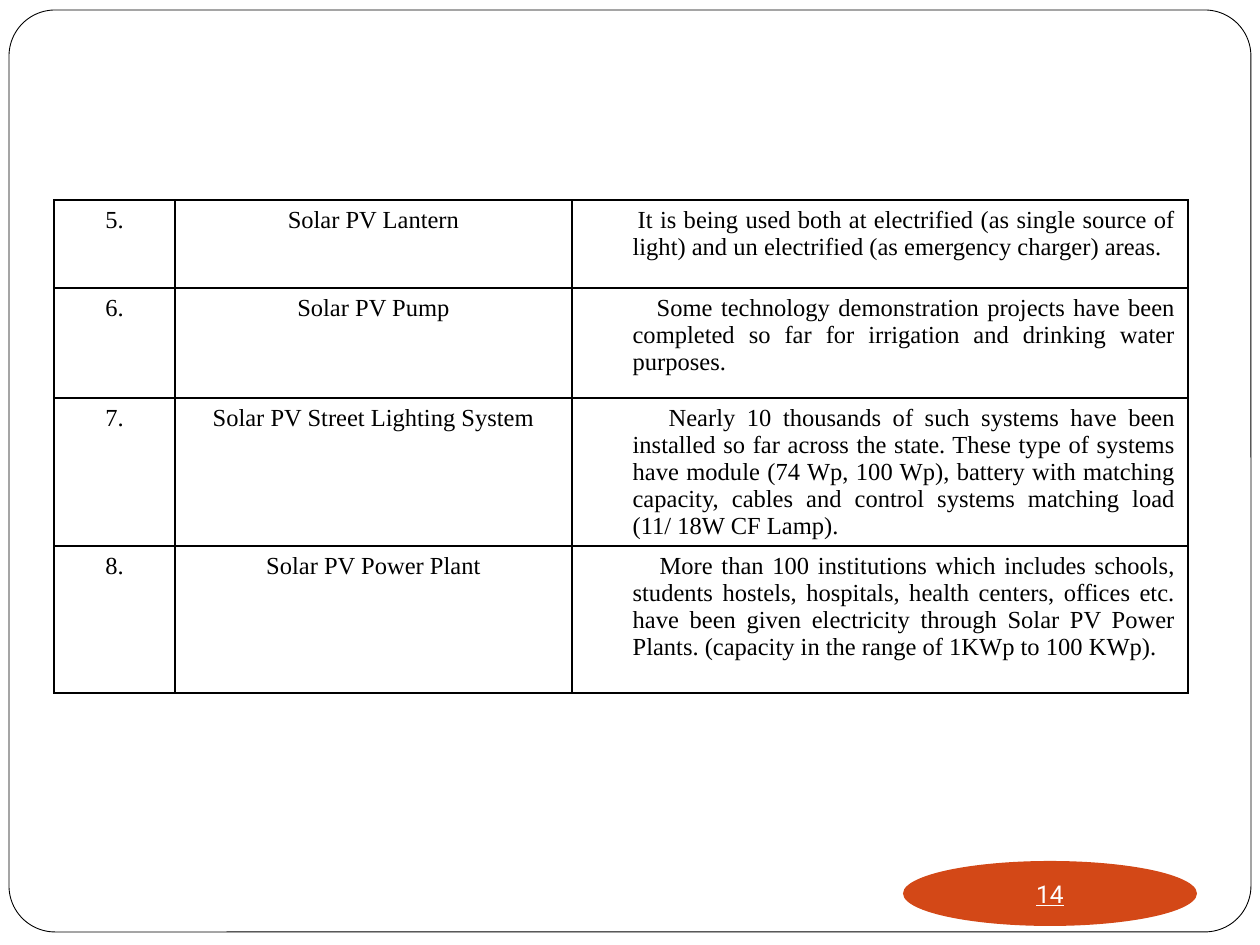
from dataclasses import dataclass

from lxml.etree import SubElement
from pptx import Presentation
from pptx.dml.color import RGBColor
from pptx.enum.shapes import MSO_SHAPE as Preset
from pptx.enum.text import MSO_ANCHOR as Anchor, PP_ALIGN as Align
from pptx.oxml.ns import qn
from pptx.util import Emu, Pt

PX_PER_INCH = 126
BLACK = RGBColor(0, 0, 0)
WHITE = RGBColor(255, 255, 255)
ORANGE = RGBColor(0xD3, 0x48, 0x17)
BORDER_TAGS = ("a:lnL", "a:lnR", "a:lnT", "a:lnB")
COLUMN_WIDTHS = (121, 397, 616)
HANGING_MARGIN = 48


@dataclass(frozen=True)
class Box:
    left: int
    top: int
    width: int
    height: int


@dataclass(frozen=True)
class SolarSystem:
    number: str
    name: str
    status: str
    first_line: int
    height: int


SYSTEMS = (
    SolarSystem("5.", "Solar PV Lantern",
                "It is being used both at electrified (as single source of light) "
                "and un electrified (as emergency charger) areas.", 5, 88),
    SolarSystem("6.", "Solar PV Pump",
                "Some technology demonstration projects have been completed so far "
                "for irrigation and drinking water purposes.", 24, 110),
    SolarSystem("7.", "Solar PV Street Lighting System",
                "Nearly 10 thousands of such systems have been installed so far "
                "across the state. These type of systems have module (74 Wp, 100 Wp), "
                "battery with matching capacity, cables and control systems matching "
                "load (11/ 18W CF Lamp).", 36, 148),
    SolarSystem("8.", "Solar PV Power Plant",
                "More than 100 institutions which includes schools, students hostels, "
                "hospitals, health centers, offices etc. have been given electricity "
                "through Solar PV Power Plants. (capacity in the range of 1KWp to "
                "100 KWp).", 27, 147),
)


def px(length: int) -> Emu:
    return Emu(round(length * 914400 / PX_PER_INCH))


def place(box: Box) -> tuple[Emu, Emu, Emu, Emu]:
    return px(box.left), px(box.top), px(box.width), px(box.height)


def add_plain_shape(slide, preset: Preset, box: Box, fill: RGBColor):
    shape = slide.shapes.add_shape(preset, *place(box))
    shape.shadow.inherit = False
    shape.fill.solid()
    shape.fill.fore_color.rgb = fill
    return shape


def write(frame, text: str, font_name: str, color: RGBColor, align: Align):
    frame.text = text
    paragraph = frame.paragraphs[0]
    paragraph.alignment = align
    font = paragraph.runs[0].font
    font.name = font_name
    font.size = Pt(14)
    font.color.rgb = color
    return paragraph


def add_borders(cell) -> None:
    properties = cell._tc.get_or_add_tcPr()
    for index, tag in enumerate(BORDER_TAGS):
        border = SubElement(properties, qn(tag), w=str(Pt(1)))
        properties.insert(index, border)
        fill = SubElement(border, qn("a:solidFill"))
        SubElement(fill, qn("a:srgbClr"), val=str(BLACK))


def add_systems_table(slide, left: int, top: int) -> None:
    box = Box(left, top, sum(COLUMN_WIDTHS), sum(s.height for s in SYSTEMS))
    table = slide.shapes.add_table(len(SYSTEMS), len(COLUMN_WIDTHS), *place(box)).table
    table.first_row = False
    table.horz_banding = False
    for column, width in zip(table.columns, COLUMN_WIDTHS):
        column.width = px(width)
    for row, system in zip(table.rows, SYSTEMS):
        row.height = px(system.height)
        texts = (system.number, system.name, system.status)
        aligns = (Align.CENTER, Align.CENTER, Align.JUSTIFY)
        for cell, text, align in zip(row.cells, texts, aligns):
            cell.fill.background()
            add_borders(cell)
            paragraph = write(cell.text_frame, text, "Times New Roman", BLACK, align)
            if align == Align.JUSTIFY:
                indents = paragraph._p.get_or_add_pPr()
                indents.set("marL", str(px(HANGING_MARGIN)))
                indents.set("indent", str(px(system.first_line)))


def add_page_number(slide, box: Box, number: str) -> None:
    badge = add_plain_shape(slide, Preset.OVAL, box, ORANGE)
    badge.line.fill.background()
    frame = badge.text_frame
    frame.margin_left = frame.margin_right = frame.margin_top = frame.margin_bottom = 0
    frame.word_wrap = False
    frame.vertical_anchor = Anchor.MIDDLE
    paragraph = write(frame, number, "Roboto", WHITE, Align.CENTER)
    paragraph.runs[0].font.underline = True


def main() -> None:
    deck = Presentation()
    deck.slide_width, deck.slide_height = px(1260), px(945)
    slide = deck.slides.add_slide(deck.slide_layouts[6])

    page_frame = add_plain_shape(slide, Preset.ROUNDED_RECTANGLE, Box(9, 10, 1242, 922), WHITE)
    page_frame.adjustments[0] = 0.05
    page_frame.line.color.rgb = BLACK
    page_frame.line.width = Pt(0.5)

    add_systems_table(slide, 54, 200)
    add_page_number(slide, Box(903, 861, 294, 65), "14")
    deck.save("out.pptx")


if __name__ == "__main__":
    main()
